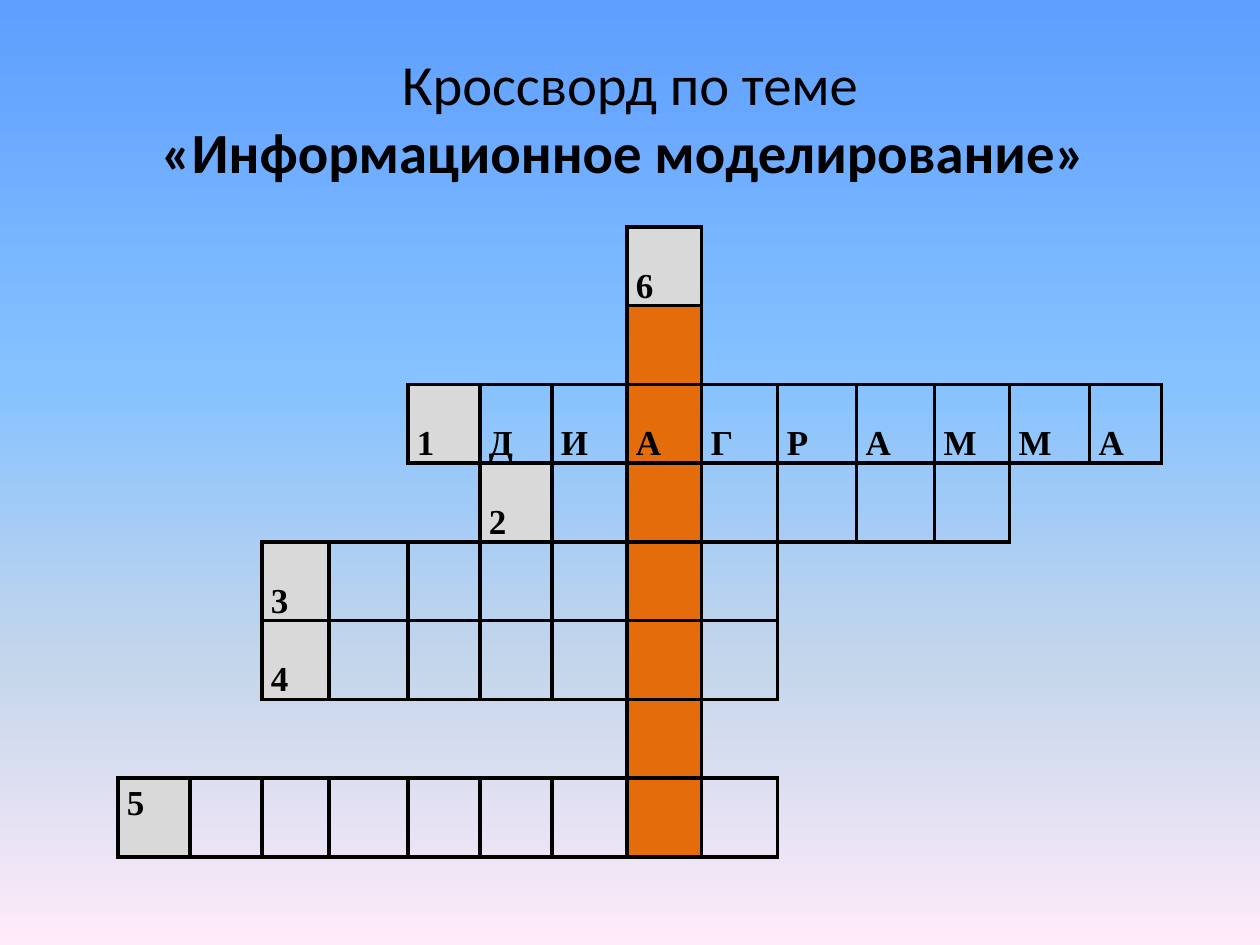
from lxml import etree
from pptx import Presentation
from pptx.dml.color import RGBColor
from pptx.enum.text import MSO_ANCHOR, PP_ALIGN
from pptx.oxml.ns import qn
from pptx.util import Pt

EMU_PER_PX = 914400 / 126
CENTER = PP_ALIGN.CENTER
MIDDLE, BOTTOM, TOP = MSO_ANCHOR.MIDDLE, MSO_ANCHOR.BOTTOM, MSO_ANCHOR.TOP
BLACK = RGBColor(0x00, 0x00, 0x00)
GRAY = RGBColor(0xD9, 0xD9, 0xD9)
ORANGE = RGBColor(0xE4, 0x6C, 0x0A)
SKY = [
    (0, RGBColor(0x5E, 0x9E, 0xFF)),
    (40, RGBColor(0x85, 0xC2, 0xFF)),
    (70, RGBColor(0xC4, 0xD6, 0xEB)),
    (100, RGBColor(0xFF, 0xEB, 0xFA)),
]

COLUMN_WIDTHS = [72, 72, 67, 79, 72, 72, 75, 75, 76, 79, 78, 75, 80, 72]
KEY_COLUMN = 7
WORDS = [
    (7, 1, "6"),
    (7, 1, ""),
    (4, 10, "1ДИАГРАММА"),
    (5, 7, "2"),
    (2, 7, "3"),
    (2, 7, "4"),
    (7, 1, ""),
    (0, 9, "5"),
]
SIDES = [("a:lnL", 0, -1), ("a:lnR", 0, 1), ("a:lnT", -1, 0), ("a:lnB", 1, 0)]


def px(length):
    return round(length * EMU_PER_PX)


def add_solid(parent, color):
    solid = etree.SubElement(parent, qn("a:solidFill"))
    etree.SubElement(solid, qn("a:srgbClr"), val=str(color))


def add_span(para, text, font, size, bold):
    span = para.add_run()
    span.text = text
    span.font.name = font
    span.font.size = Pt(size)
    span.font.bold = bold
    span.font.color.rgb = BLACK


def paint_background(page):
    fill = page.background.fill
    fill.gradient()
    fill.gradient_angle = 270
    stops = next(page.element.iter(qn("a:gsLst")))
    for stop in list(stops):
        stops.remove(stop)
    for percent, color in SKY:
        stop = etree.SubElement(stops, qn("a:gs"), pos=str(percent * 1000))
        etree.SubElement(stop, qn("a:srgbClr"), val=str(color))


def add_title(page, left, top, width, height):
    box = page.shapes.add_textbox(px(left), px(top), px(width), px(height))
    frame = box.text_frame
    frame.word_wrap = True
    frame.vertical_anchor = MIDDLE
    para = frame.paragraphs[0]
    para.alignment = CENTER
    add_span(para, "Кроссворд по теме", "Calibri", 32.4, False)
    para.add_line_break()
    add_span(para, "«Информационное моделирование» ", "Calibri", 32.4, True)


def in_word(row, column):
    if not 0 <= row < len(WORDS):
        return False
    start, length, _ = WORDS[row]
    return start <= column < start + length


def set_borders(cell, row, column):
    properties = cell._tc.get_or_add_tcPr()
    for tag, down, right in SIDES:
        line = etree.SubElement(properties, qn(tag), w=str(Pt(2.25)))
        if in_word(row, column) or in_word(row + down, column + right):
            add_solid(line, BLACK)
        else:
            etree.SubElement(line, qn("a:noFill"))


def fill_cell(cell, row, column):
    start, _, letters = WORDS[row]
    if letters and column == start:
        color = GRAY
    elif column == KEY_COLUMN and in_word(row, column):
        color = ORANGE
    else:
        cell.fill.background()
        return
    cell.fill.solid()
    cell.fill.fore_color.rgb = color


def write_letter(cell, letter, anchor):
    cell.margin_left = cell.margin_right = px(9)
    cell.margin_top = cell.margin_bottom = 0
    cell.vertical_anchor = anchor
    para = cell.text_frame.paragraphs[0]
    para.line_spacing = 1.15
    add_span(para, letter, "Times New Roman", 20, True)


def add_crossword(page, left, top, height):
    shape = page.shapes.add_table(
        len(WORDS), len(COLUMN_WIDTHS),
        px(left), px(top), px(sum(COLUMN_WIDTHS)), px(height))
    table = shape.table
    table.first_row = table.horz_banding = False
    for column, width in zip(table.columns, COLUMN_WIDTHS):
        column.width = px(width)
    for row, (start, _, letters) in enumerate(WORDS):
        for column in range(len(COLUMN_WIDTHS)):
            cell = table.cell(row, column)
            set_borders(cell, row, column)
            fill_cell(cell, row, column)
        anchor = TOP if row == len(WORDS) - 1 else BOTTOM
        for column, letter in enumerate(letters, start):
            write_letter(table.cell(row, column), letter, anchor)


def main():
    deck = Presentation()
    deck.slide_width, deck.slide_height = px(1260), px(945)
    page = deck.slides.add_slide(deck.slide_layouts[6])
    paint_background(page)
    add_title(page, 63, 38, 1134, 158)
    add_crossword(page, 118, 227, 630)
    deck.save("out.pptx")


if __name__ == "__main__":
    main()
